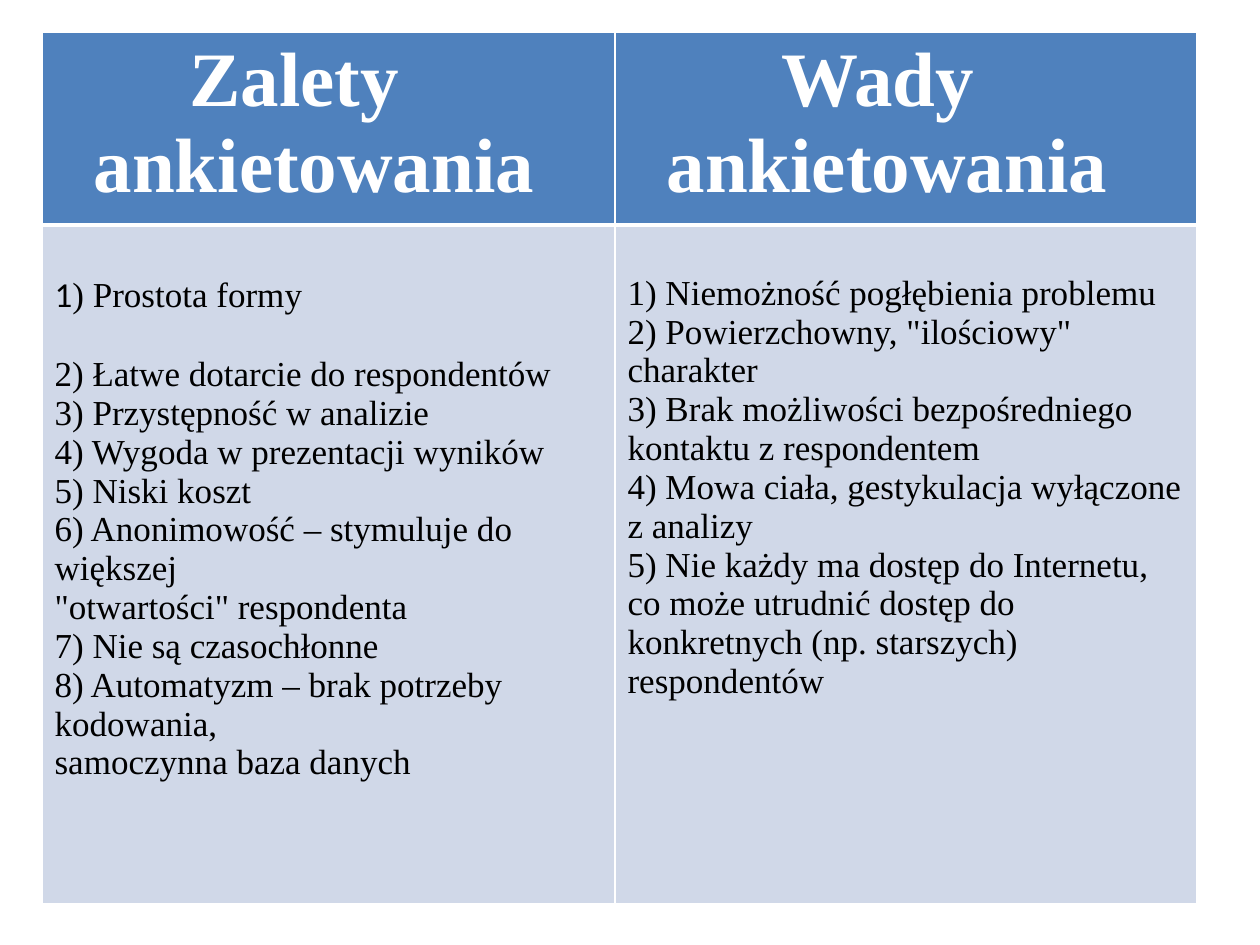
"""Build a slide with a table comparing pros and cons of surveys."""
from pptx import Presentation
from pptx.dml.color import RGBColor as Rgb
from pptx.oxml.ns import qn
from pptx.util import Pt
from lxml.etree import SubElement as Sub

PX = 914400 // 126
COLORS = {"header": "4F81BD", "body": "D0D8E8", "white": "FFFFFF", "black": "000000"}
SERIF = "Times New Roman"


def add_text(para, text, size=20, color="black", bold=False, font=SERIF, indent=0):
    span = para.add_run()
    span.text = text
    span.font.name = font
    span.font.size = Pt(size)
    span.font.bold = bold
    span.font.color.rgb = Rgb.from_string(COLORS[color])
    if indent:
        para._p.get_or_add_pPr().set("marL", str(indent * PX))


def style_cell(cell, fill, borders):
    properties = cell._tc.get_or_add_tcPr()
    for side, width in borders.items():
        line = Sub(properties, qn(f"a:ln{side}"), w=str(Pt(width)))
        Sub(Sub(line, qn("a:solidFill")), qn("a:srgbClr"), val=COLORS["white"])
    cell.fill.solid()
    cell.fill.fore_color.rgb = Rgb.from_string(COLORS[fill])


deck = Presentation()
deck.slide_width, deck.slide_height = 1260 * PX, 945 * PX
page = deck.slides.add_slide(deck.slide_layouts[6])
table = page.shapes.add_table(2, 2, 42 * PX, 32 * PX, 1155 * PX, 872 * PX).table
for column, width in zip(table.columns, (573, 582)):
    column.width = width * PX
for row, height in zip(table.rows, (193, 679)):
    row.height = height * PX

headings = [("Zalety", 135), ("Wady", 154)]
lists = [
    [
        ") Prostota formy",
        "2) Łatwe dotarcie do respondentów",
        "3) Przystępność w analizie",
        "4) Wygoda w prezentacji wyników",
        "5) Niski koszt",
        "6) Anonimowość – stymuluje do większej",
        '"otwartości" respondenta',
        "7) Nie są czasochłonne",
        "8) Automatyzm – brak potrzeby kodowania,",
        "samoczynna baza danych",
    ],
    [
        "1) Niemożność pogłębienia problemu",
        '2) Powierzchowny, "ilościowy" charakter',
        "3) Brak możliwości bezpośredniego kontaktu z respondentem",
        "4) Mowa ciała, gestykulacja wyłączone z analizy",
        "5) Nie każdy ma dostęp do Internetu, co może utrudnić dostęp do "
        "konkretnych (np. starszych) respondentów",
    ],
]

for index, ((word, indent), items) in enumerate(zip(headings, lists)):
    header, body = table.cell(0, index), table.cell(1, index)
    style_cell(header, "header", {"L": 1, "R": 1, "T": 1, "B": 3})
    style_cell(body, "body", {"L": 1, "R": 1, "T": 3, "B": 1})
    body.margin_top = 49 * PX

    first = header.text_frame.paragraphs[0]
    second = header.text_frame.add_paragraph()
    add_text(first, word, size=44, color="white", bold=True, indent=indent)
    add_text(second, "ankietowania", size=44, color="white", bold=True, indent=39)

    frame = body.text_frame
    for number, item in enumerate(items):
        para = frame.add_paragraph() if number else frame.paragraphs[0]
        if item.startswith(")"):
            add_text(para, "1", font="Calibri")
            para.space_after = Pt(22)
        add_text(para, item)

deck.save("out.pptx")
